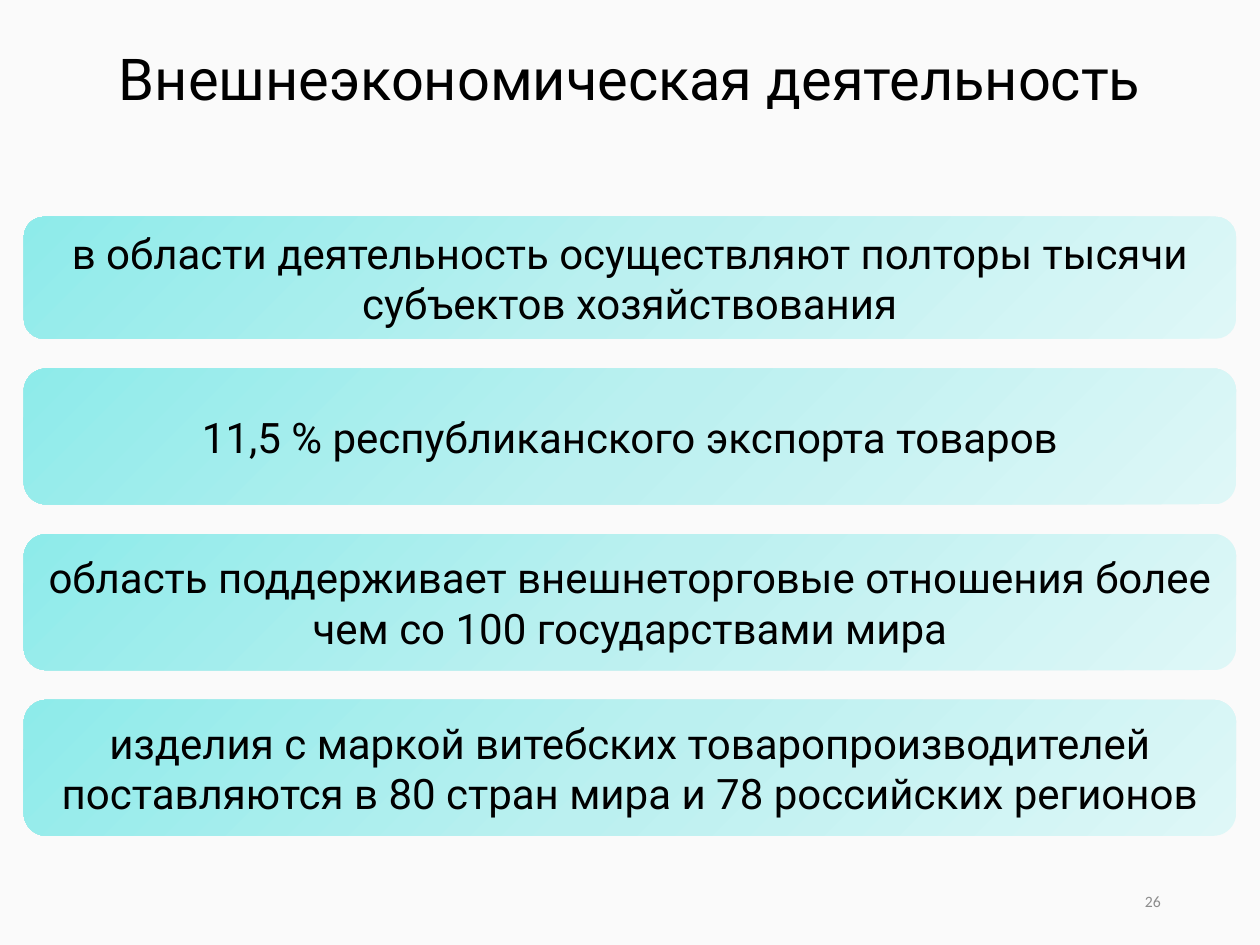
import pptx
import pptx.dml.color
import pptx.enum.shapes
import pptx.enum.text
import pptx.oxml.ns
import pptx.util
from lxml import etree

Cm = pptx.util.Cm
ALIGN = pptx.enum.text.PP_ALIGN
qn = pptx.oxml.ns.qn


def color(code):
    return pptx.dml.color.RGBColor.from_string(code)


class Deck:
    """Holds the style and the current slide."""
    font = "Roboto"
    ink = "000000"
    stops = ((0, "8EEBEA"), (50, "BBF0F0"), (100, "DEF7F7"))

    def __init__(self, wide, high, back):
        self.prs = pptx.Presentation()
        self.prs.slide_width = Cm(wide)
        self.prs.slide_height = Cm(high)
        self.slide = self.prs.slides.add_slide(self.prs.slide_layouts[6])
        fill = self.slide.background.fill
        fill.solid()
        fill.fore_color.rgb = color(back)

    def letter(self, shape, text, size, align=ALIGN.CENTER, font=None,
               ink=None, space=None):
        frame = shape.text_frame
        frame.word_wrap = True
        frame.vertical_anchor = pptx.enum.text.MSO_ANCHOR.MIDDLE
        para = frame.paragraphs[0]
        para.alignment = align
        para.line_spacing = space
        run = para.add_run()
        run.text = text
        run.font.size = pptx.util.Pt(size)
        run.font.name = font or self.font
        run.font.color.rgb = color(ink or self.ink)

    def label(self, left, top, wide, high, text, size, **style):
        box = self.slide.shapes.add_textbox(
            Cm(left), Cm(top), Cm(wide), Cm(high))
        self.letter(box, text, size, **style)

    def shade(self, shape):
        """Radial gradient that spreads from the top left corner."""
        shape.fill.gradient()
        grad = shape.element.spPr.find(qn("a:gradFill"))
        grad.clear()
        group = etree.SubElement(grad, qn("a:gsLst"))
        for pos, code in self.stops:
            stop = etree.SubElement(group, qn("a:gs"), pos=str(pos * 1000))
            etree.SubElement(stop, qn("a:srgbClr"), val=code)
        way = etree.SubElement(grad, qn("a:path"))
        way.set("path", "circle")
        etree.SubElement(way, qn("a:fillToRect"), r="100000", b="100000")

    def card(self, left, top, wide, high, text, size):
        shape = self.slide.shapes.add_shape(
            pptx.enum.shapes.MSO_SHAPE.ROUNDED_RECTANGLE,
            Cm(left), Cm(top), Cm(wide), Cm(high))
        shape.shadow.inherit = False
        shape.line.fill.background()
        self.shade(shape)
        self.letter(shape, text, size)


def main():
    deck = Deck(25.4, 19.05, "FAFAFA")

    # Page number and title
    deck.label(17.93, 17.65, 5.72, 1.02, "26", 9, align=ALIGN.RIGHT,
               font="Calibri", ink="8C8C8C")
    deck.label(0, 0.94, 25.4, 1.5, "Внешнеэкономическая деятельность", 33,
               space=0.8)

    # Stack of cards with equal gaps
    cards = (
        (2.46, "в области деятельность осуществляют полторы тысячи "
               "субъектов хозяйствования"),
        (2.74, "11,5 % республиканского экспорта товаров"),
        (2.74, "область поддерживает внешнеторговые отношения более "
               "чем со 100 государствами мира"),
        (2.74, "изделия с маркой витебских товаропроизводителей "
               "поставляются в 80 стран мира и 78 российских регионов"),
    )
    top, gap = 4.37, 0.6
    for high, text in cards:
        deck.card(0.48, top, 24.44, high, text, 24)
        top += high + gap

    deck.prs.save("out.pptx")


if __name__ == "__main__":
    main()
